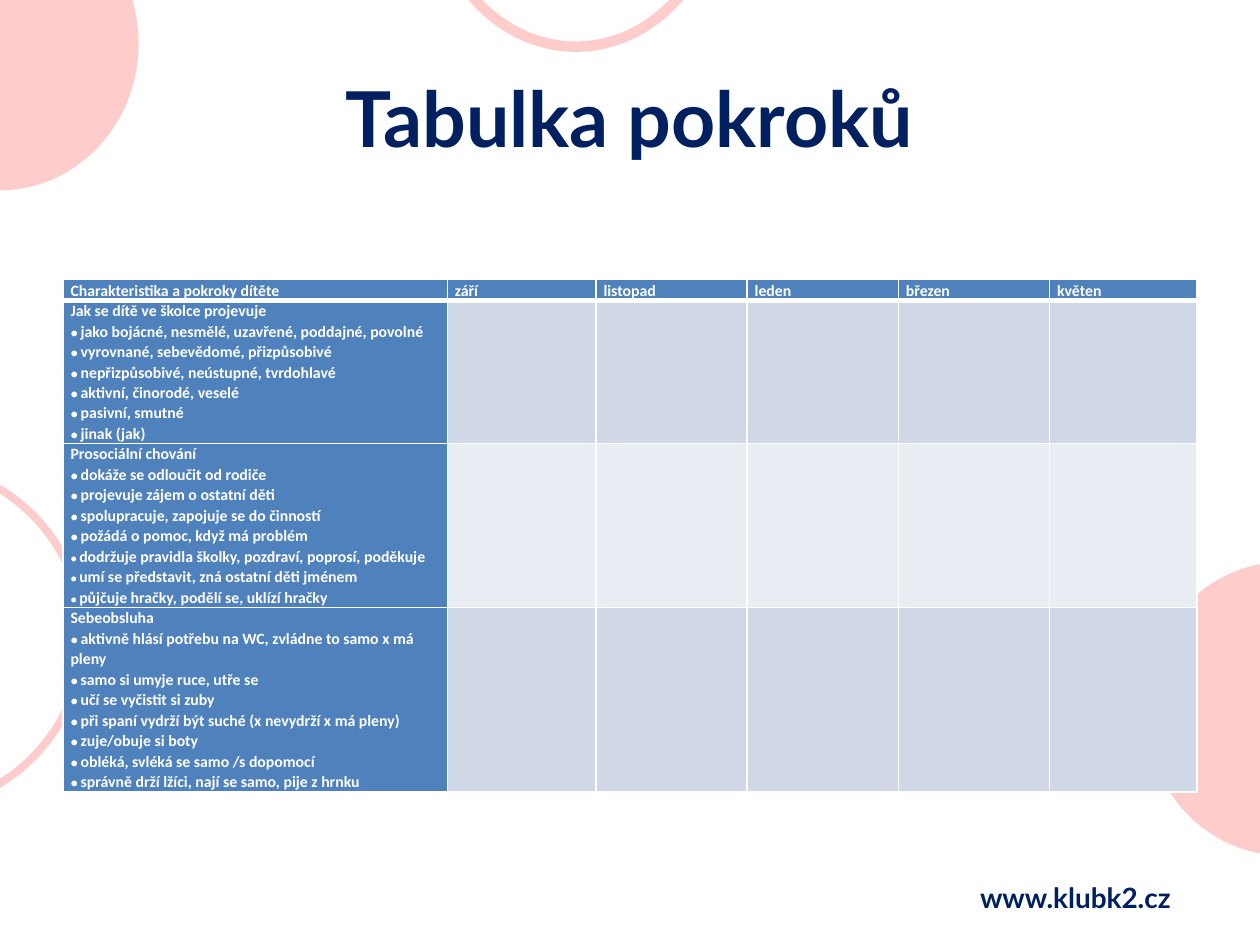
from dataclasses import dataclass
from itertools import chain
from typing import NamedTuple, Optional

from lxml.etree import SubElement
from pptx import Presentation
from pptx.dml.color import RGBColor
from pptx.enum.shapes import MSO_SHAPE
from pptx.enum.text import MSO_ANCHOR, PP_ALIGN
from pptx.oxml.ns import qn
from pptx.util import Inches, Pt


@dataclass(frozen=True)
class Theme:
    navy: str = "002060"
    pink: str = "FFCCCC"
    blue: str = "4F81BD"
    white: str = "FFFFFF"
    bands: tuple = ("D0D8E8", "E9EDF4")
    heading_font: str = "Lato"
    table_font: str = "Calibri"
    title_size: float = 44
    footer_size: float = 16
    table_size: float = 9
    bullet_size: float = 7
    small_bullet_size: float = 6
    line_spacing: float = 1.07
    border: float = 1
    header_border: float = 3


class Frame(NamedTuple):
    """Left, top, width and height in percent of the slide."""
    left: float
    top: float
    width: float
    height: float


class Circle(NamedTuple):
    frame: Frame
    ring_width: Optional[float] = None


class Area(NamedTuple):
    """A table row; its last small_tail skills have smaller bullets."""
    name: str
    skills: tuple
    lines: int
    small_tail: int = 0


THEME = Theme()
SLIDE_WIDTH, SLIDE_HEIGHT = Inches(10), Inches(7.5)

TITLE_FRAME = Frame(5, 4, 90, 16.67)
TABLE_FRAME = Frame(5, 29.6, 90, 53.5)
FOOTER_FRAME = Frame(76.8, 92.53, 19.7, 4.93)
COLUMN_WIDTHS = (30.5, 11.8, 12, 12, 12, 11.7)
LINE_HEIGHT = 2.13

CIRCLES = (
    Circle(Frame(-11, -10.93, 22, 31.07)),
    Circle(Frame(-21.7, 48.93, 28.3, 36.8), 4.5),
    Circle(Frame(34.3, -29.73, 22.8, 34.67), 6),
    Circle(Frame(90.9, 59.47, 22, 31.07)),
)

HEADERS = ("Charakteristika a pokroky dítěte", "září", "listopad",
           "leden", "březen", "květen")
AREAS = (
    Area("Jak se dítě ve školce projevuje", (
        "jako bojácné, nesmělé, uzavřené, poddajné, povolné",
        "vyrovnané, sebevědomé, přizpůsobivé",
        "nepřizpůsobivé, neústupné, tvrdohlavé",
        "aktivní, činorodé, veselé",
        "pasivní, smutné",
        "jinak (jak)",
    ), lines=7),
    Area("Prosociální chování", (
        "dokáže se odloučit od rodiče",
        "projevuje zájem o ostatní děti",
        "spolupracuje, zapojuje se do činností",
        "požádá o pomoc, když má problém",
        "dodržuje pravidla školky, pozdraví, poprosí, poděkuje",
        "umí se představit, zná ostatní děti jménem",
        "půjčuje hračky, podělí se, uklízí hračky",
    ), lines=8, small_tail=3),
    Area("Sebeobsluha", (
        "aktivně hlásí potřebu na WC, zvládne to samo x má pleny",
        "samo si umyje ruce, utře se",
        "učí se vyčistit si zuby",
        "při spaní vydrží být suché (x nevydrží x má pleny)",
        "zuje/obuje si boty",
        "obléká, svléká se samo /s dopomocí",
        "správně drží lžíci, nají se samo, pije z hrnku",
    ), lines=9),
)


def across(percent: float) -> int:
    return round(SLIDE_WIDTH * percent / 100)


def down(percent: float) -> int:
    return round(SLIDE_HEIGHT * percent / 100)


def place(frame: Frame) -> tuple:
    return (across(frame.left), down(frame.top),
            across(frame.width), down(frame.height))


def add_span(para, text: str, *, size: float, font: str, color: str) -> None:
    span = para.add_run()
    span.text = text
    span.font.name = font
    span.font.size = Pt(size)
    span.font.bold = True
    span.font.color.rgb = RGBColor.from_string(color)


def add_circle(page, circle: Circle) -> None:
    shape = page.shapes.add_shape(MSO_SHAPE.OVAL, *place(circle.frame))
    shape.shadow.inherit = False
    pink = RGBColor.from_string(THEME.pink)
    if circle.ring_width is None:
        shape.fill.solid()
        shape.fill.fore_color.rgb = pink
        shape.line.fill.background()
    else:
        shape.fill.background()
        shape.line.color.rgb = pink
        shape.line.width = Pt(circle.ring_width)


def add_title(page) -> None:
    title = page.shapes.title
    title.left, title.top, title.width, title.height = place(TITLE_FRAME)
    title.element.getparent().append(title.element)  # in front of the circles
    title.text_frame.vertical_anchor = MSO_ANCHOR.MIDDLE
    para = title.text_frame.paragraphs[0]
    para.alignment = PP_ALIGN.CENTER
    add_span(para, "Tabulka pokroků", size=THEME.title_size,
             font=THEME.heading_font, color=THEME.navy)


def add_footer(page) -> None:
    box = page.shapes.add_textbox(*place(FOOTER_FRAME))
    box.text_frame.word_wrap = True
    box.text_frame.vertical_anchor = MSO_ANCHOR.MIDDLE
    add_span(box.text_frame.paragraphs[0], "www.klubk2.cz",
             size=THEME.footer_size, font=THEME.heading_font, color=THEME.navy)


def style_cell(cell, fill: str, top: float, bottom: float) -> None:
    cell.margin_left = cell.margin_right = Inches(0.06)
    cell.margin_top = cell.margin_bottom = 0
    properties = cell._tc.get_or_add_tcPr()
    widths = {"L": THEME.border, "R": THEME.border, "T": top, "B": bottom}
    for side, width in widths.items():
        line = SubElement(properties, qn(f"a:ln{side}"), w=str(Pt(width)))
        paint = SubElement(line, qn("a:solidFill"))
        SubElement(paint, qn("a:srgbClr"), val=THEME.white)
    cell.fill.solid()
    cell.fill.fore_color.rgb = RGBColor.from_string(fill)


def write_line(para, text: str, bullet_size: Optional[float] = None) -> None:
    para.line_spacing = THEME.line_spacing
    look = {"font": THEME.table_font, "color": THEME.white}
    if bullet_size is not None:
        add_span(para, "● ", size=bullet_size, **look)
    add_span(para, text, size=THEME.table_size, **look)


def write_area(cell, area: Area) -> None:
    write_line(cell.text_frame.paragraphs[0], area.name)
    first_small = len(area.skills) - area.small_tail
    for index, skill in enumerate(area.skills):
        size = THEME.bullet_size if index < first_small else THEME.small_bullet_size
        write_line(cell.text_frame.add_paragraph(), skill, size)


def add_progress_table(page) -> None:
    table = page.shapes.add_table(len(AREAS) + 1, len(HEADERS),
                                  *place(TABLE_FRAME)).table
    for column, width in zip(table.columns, COLUMN_WIDTHS):
        column.width = across(width)
    line_counts = chain([1], (area.lines for area in AREAS))
    for row, lines in zip(table.rows, line_counts):
        row.height = down(lines * LINE_HEIGHT)

    for cell, header in zip(table.rows[0].cells, HEADERS):
        style_cell(cell, THEME.blue, THEME.border, THEME.header_border)
        write_line(cell.text_frame.paragraphs[0], header)
    for index, area in enumerate(AREAS):
        top = THEME.border if index else THEME.header_border
        band = THEME.bands[index % len(THEME.bands)]
        for column, cell in enumerate(table.rows[index + 1].cells):
            style_cell(cell, band if column else THEME.blue, top, THEME.border)
        write_area(table.cell(index + 1, 0), area)


def main() -> None:
    deck = Presentation()
    deck.slide_width, deck.slide_height = SLIDE_WIDTH, SLIDE_HEIGHT
    page = deck.slides.add_slide(deck.slide_layouts.get_by_name("Title Only"))
    for circle in CIRCLES:
        add_circle(page, circle)
    add_footer(page)
    add_title(page)
    add_progress_table(page)
    deck.save("out.pptx")


if __name__ == "__main__":
    main()
